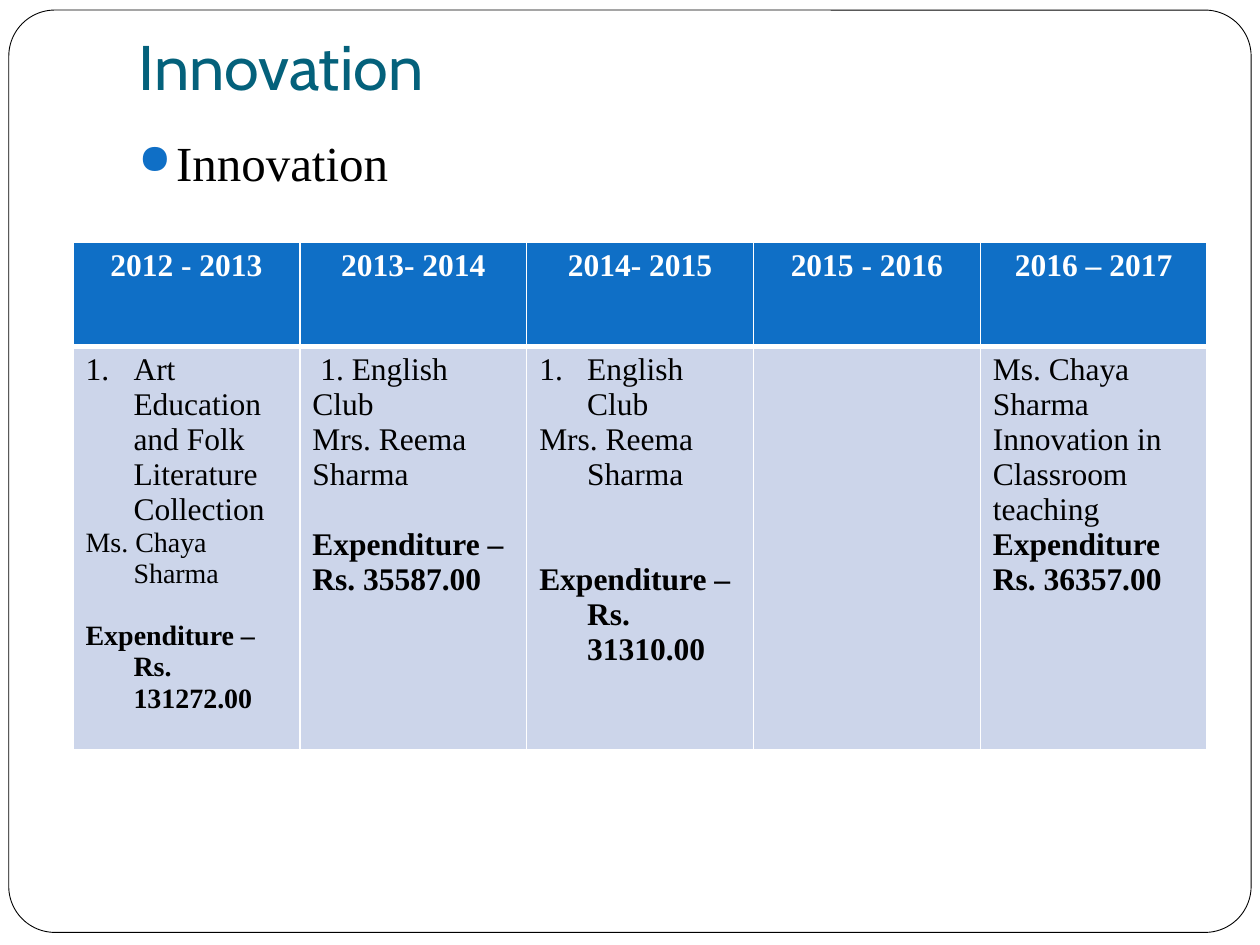
from lxml.etree import SubElement
from pptx import Presentation
from pptx.dml.color import RGBColor
from pptx.enum.shapes import MSO_SHAPE
from pptx.enum.text import MSO_ANCHOR, MSO_AUTO_SIZE, PP_ALIGN
from pptx.oxml.ns import qn
from pptx.util import Inches, Pt

COLORS = {
    "paper": "FFFFFF",
    "ink": "000000",
    "title": "04617B",
    "accent": "0F6FC6",
    "band": "CCD5EA",
}
SERIF = "Times New Roman"
YEARS = ["2012 - 2013", "2013- 2014", "2014- 2015", "2015 - 2016", "2016 – 2017"]
NUMBERED = {"hang": 0.38, "number": True}
HANGING = {"hang": 0.38}
PROJECTS = [
    [
        ("Art Education and Folk Literature Collection", NUMBERED),
        ("Ms. Chaya Sharma", {**HANGING, "size": 16}),
        ("Expenditure – Rs. 131272.00", {**HANGING, "size": 16, "bold": True, "before": 18}),
    ],
    [
        (" 1. English Club", {}),
        ("Mrs. Reema Sharma", {}),
        ("Expenditure – Rs. 35587.00", {"bold": True, "before": 20}),
    ],
    [
        ("English Club", NUMBERED),
        ("Mrs. Reema Sharma", HANGING),
        ("Expenditure – Rs. 31310.00", {**HANGING, "bold": True, "before": 40}),
    ],
    [],
    [
        ("Ms. Chaya Sharma", {}),
        ("Innovation in Classroom teaching", {}),
        ("Expenditure Rs. 36357.00", {"bold": True}),
    ],
]


class SlideBuilder:
    columns, rows = 10, 7.5

    def __init__(self, deck):
        deck.slide_width, deck.slide_height = Inches(10), Inches(7.5)
        self.column = deck.slide_width / self.columns
        self.row = deck.slide_height / self.rows
        self.page = deck.slides.add_slide(deck.slide_layouts[5])

    def area(self, left, top, width, height):
        return [
            round(left * self.column),
            round(top * self.row),
            round(width * self.column),
            round(height * self.row),
        ]

    def color(self, name):
        return RGBColor.from_string(COLORS[name])

    def apply(self, target, values):
        for name, value in values.items():
            setattr(target, name, value)

    def add_text(self, para, text, size=18, color="ink", font=SERIF, bold=False,
                 align=PP_ALIGN.LEFT, before=0, hang=0, number=False):
        self.apply(para, {"alignment": align, "space_before": Pt(before)})
        span = para.add_run()
        span.text = text
        self.apply(span.font, {"name": font, "size": Pt(size), "bold": bold})
        span.font.color.rgb = self.color(color)
        if hang:
            properties = para._p.get_or_add_pPr()
            properties.set("marL", str(Inches(hang)))
            properties.set("indent", str(-Inches(hang)))
            if number:
                SubElement(properties, qn("a:buFont"), typeface="+mj-lt")
                SubElement(properties, qn("a:buAutoNum"), type="arabicPeriod")

    def frame(self, area):
        box = self.page.shapes.add_shape(MSO_SHAPE.ROUNDED_RECTANGLE, *self.area(*area))
        box.adjustments[0] = 0.05
        box.shadow.inherit = False
        box.fill.solid()
        box.fill.fore_color.rgb = self.color("paper")
        box.line.color.rgb = self.color("ink")
        box.line.width = Pt(0.5)
        self.page.shapes._spTree.insert(2, box._element)

    def title(self, area, text):
        box = self.page.shapes.title
        self.apply(box, dict(zip(("left", "top", "width", "height"), self.area(*area))))
        self.apply(box.text_frame, {
            "vertical_anchor": MSO_ANCHOR.BOTTOM,
            "auto_size": MSO_AUTO_SIZE.NONE,
            "word_wrap": True,
            "margin_bottom": Inches(0.1),
        })
        self.add_text(box.text_frame.paragraphs[0], text, size=36, color="title", font="Cabin")

    def bullet(self, area, text):
        box = self.page.shapes.add_textbox(*self.area(*area))
        box.text_frame.word_wrap = True
        para = box.text_frame.paragraphs[0]
        self.add_text(para, text, size=28, before=5.8, hang=0.3)
        properties = para._p.get_or_add_pPr()
        tint = SubElement(properties, qn("a:buClr"))
        SubElement(tint, qn("a:srgbClr"), val=COLORS["accent"])
        SubElement(properties, qn("a:buSzPct"), val="85000")
        SubElement(properties, qn("a:buChar"), char="●")

    def cell(self, cell, lines, fill, top, bottom):
        properties = cell._tc.get_or_add_tcPr()
        for side, width in {"L": 1, "R": 1, "T": top, "B": bottom}.items():
            border = SubElement(properties, qn(f"a:ln{side}"), w=str(Pt(width)))
            paint = SubElement(border, qn("a:solidFill"))
            SubElement(paint, qn("a:srgbClr"), val=COLORS["paper"])
        cell.fill.solid()
        cell.fill.fore_color.rgb = self.color(fill)
        frame = cell.text_frame
        for index, (text, style) in enumerate(lines):
            para = frame.add_paragraph() if index else frame.paragraphs[0]
            self.add_text(para, text, **style)

    def table(self, area, heights, headings, entries):
        shape = self.page.shapes.add_table(2, len(headings), *self.area(*area))
        grid = shape.table
        for row, height in zip(grid.rows, heights):
            row.height = round(height * self.row)
        heading_style = {"color": "paper", "bold": True, "align": PP_ALIGN.CENTER}
        for index, (heading, lines) in enumerate(zip(headings, entries)):
            self.cell(grid.cell(0, index), [(heading, heading_style)], "accent", 1, 3)
            self.cell(grid.cell(1, index), lines, "band", 3, 1)


def main():
    deck = Presentation()
    slide = SlideBuilder(deck)
    slide.frame((0.07, 0.08, 9.86, 7.32))
    slide.title((1, 0.3, 8.5, 0.62), "Innovation")
    slide.bullet((1, 1, 8.5, 0.67), "Innovation")
    slide.table((0.58, 1.92, 9, 4.03), (0.83, 3.2), YEARS, PROJECTS)
    deck.save("out.pptx")


if __name__ == "__main__":
    main()
